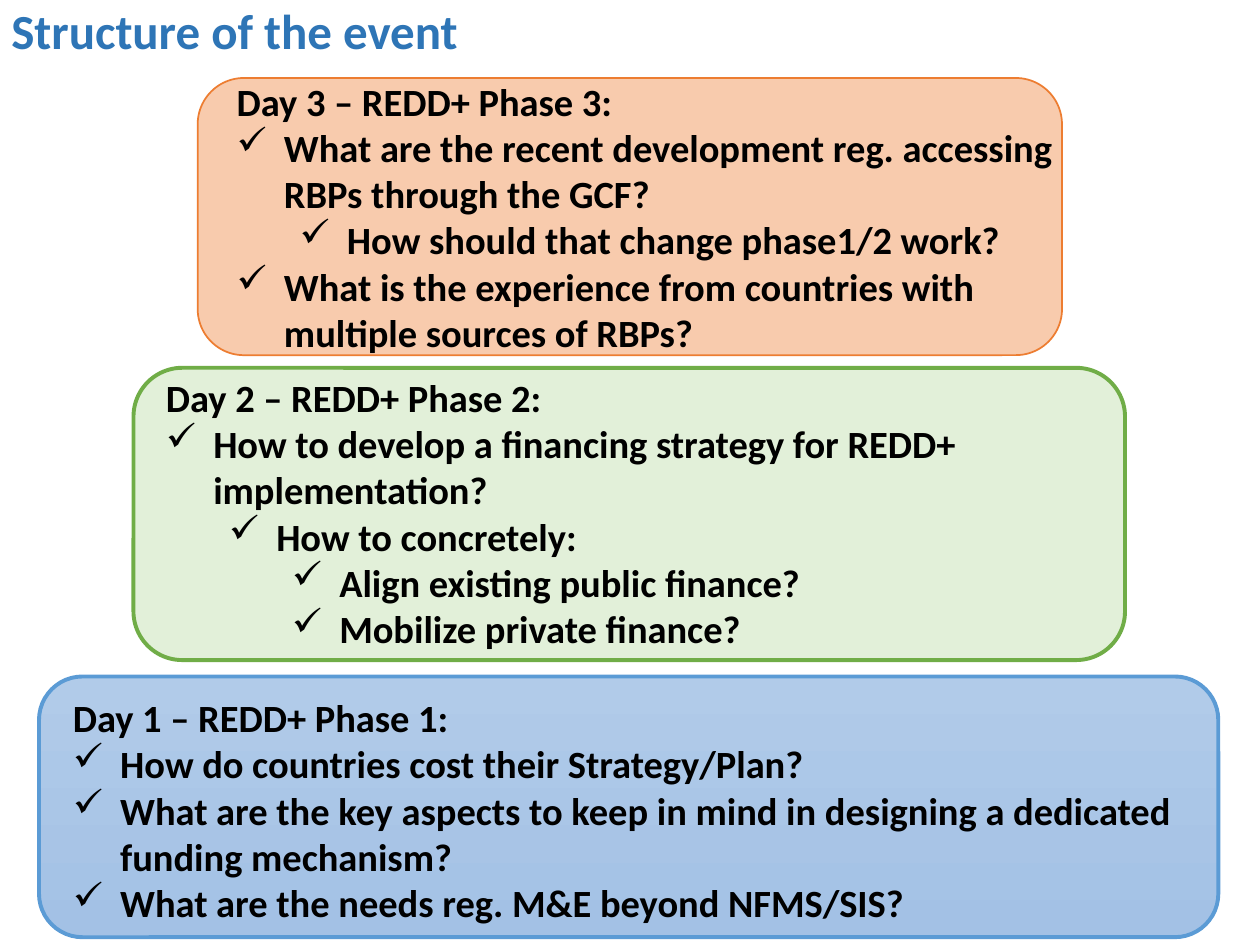
from lxml import etree
from pptx import Presentation
from pptx.dml.color import RGBColor
from pptx.enum.shapes import MSO_SHAPE
from pptx.enum.text import MSO_ANCHOR, MSO_AUTO_SIZE, PP_ALIGN
from pptx.oxml.ns import qn
from pptx.util import Pt

ROUNDED = MSO_SHAPE.ROUNDED_RECTANGLE
MIDDLE = MSO_ANCHOR.MIDDLE
LEFT = PP_ALIGN.LEFT
NO_FIT = MSO_AUTO_SIZE.NONE
GROW = MSO_AUTO_SIZE.SHAPE_TO_FIT_TEXT
TITLE_ONLY = 5


def rgb(color):
    return RGBColor.from_string(color)


class Deck:
    font = "Calibri"
    title_color = "2E75B6"
    text_color = "000000"
    hanging = 27
    level_step = 36

    def __init__(self, width, height):
        self.prs = Presentation()
        self.prs.slide_width, self.prs.slide_height = Pt(width), Pt(height)
        self.s = self.prs.slides.add_slide(self.prs.slide_layouts[TITLE_ONLY])

    def style(self, p, size, color):
        p.font.name = self.font
        p.font.size = Pt(size)
        p.font.bold = True
        p.font.color.rgb = rgb(color)
        p.alignment = LEFT

    def title(self, text, x, y, w, h):
        sp = self.s.shapes.title
        sp.left, sp.top, sp.width, sp.height = map(Pt, (x, y, w, h))
        tf = sp.text_frame
        tf.text = text
        tf.auto_size = NO_FIT
        tf.vertical_anchor = MIDDLE
        p = tf.paragraphs[0]
        self.style(p, 28, self.title_color)
        p.space_before = Pt(7)
        p.line_spacing = 0.9

    def panel(self, x, y, w, h, fills, line, line_width):
        """One fill colour is solid; two run from top to bottom."""
        sp = self.s.shapes.add_shape(ROUNDED, *map(Pt, (x, y, w, h)))
        sp.shadow.inherit = False
        if len(fills) == 1:
            sp.fill.solid()
            sp.fill.fore_color.rgb = rgb(fills[0])
        else:
            sp.fill.gradient()
            sp.fill.gradient_angle = 270
            for stop, color, position in zip(sp.fill.gradient_stops, fills, (0, 1)):
                stop.color.rgb = rgb(color)
                stop.position = position
        sp.line.color.rgb = rgb(line)
        sp.line.width = Pt(line_width)

    def checklist(self, x, y, w, h, heading, items):
        tf = self.s.shapes.add_textbox(*map(Pt, (x, y, w, h))).text_frame
        tf.word_wrap = True
        tf.auto_size = GROW
        p = tf.paragraphs[0]
        p.text = heading
        self.style(p, 22, self.text_color)
        for level, text in items:
            p = tf.add_paragraph()
            p.text = text
            p.level = level
            self.style(p, 22, self.text_color)
            self.check(p, level)

    def check(self, p, level):
        pPr = p._p.get_or_add_pPr()
        pPr.set("marL", str(Pt(self.hanging + level * self.level_step)))
        pPr.set("indent", str(-Pt(self.hanging)))
        bullet = etree.Element(qn("a:buChar"), char="✓")
        pPr.insert_element_before(bullet, "a:tabLst", "a:defRPr", "a:extLst")


# Panel box, fills, line, line width, text box, heading, (level, item) pairs
DAYS = [
    ((22.3, 386.6, 673.9, 149), ["B1CBE9", "A3C1E5"], "5B9BD5", 2.25,
     (34.6, 393.1, 650.9, 140.4), "Day 1 – REDD+ Phase 1:", [
         (0, "How do countries cost their Strategy/Plan?"),
         (0, "What are the key aspects to keep in mind in designing a "
             "dedicated funding mechanism?"),
         (0, "What are the needs reg. M&E beyond NFMS/SIS?")]),
    ((76.3, 210.2, 566.6, 167), ["E2F0D9"], "70AD47", 2.25,
     (87.8, 210.2, 544.3, 167), "Day 2 – REDD+ Phase 2:", [
         (0, "How to develop a financing strategy for REDD+ implementation?"),
         (1, "How to concretely:"),
         (2, "Align existing public finance?"),
         (2, "Mobilize private finance?")]),
    ((113, 44.6, 493.9, 158.4), ["F8CBAD"], "ED7D31", 1,
     (128.2, 41, 484.6, 167), "Day 3 – REDD+ Phase 3:", [
         (0, "What are the recent development reg. accessing RBPs "
             "through the GCF?"),
         (1, "How should that change phase1/2 work?"),
         (0, "What is the experience from countries with multiple "
             "sources of RBPs?")]),
]


def main():
    deck = Deck(720, 540)
    deck.title("Structure of the event", -0.7, -1.4, 720.7, 41)

    # Pyramid of days, from the base up
    for box, fills, line, line_width, text_box, heading, items in DAYS:
        deck.panel(*box, fills, line, line_width)
        deck.checklist(*text_box, heading, items)

    deck.prs.save("out.pptx")


if __name__ == "__main__":
    main()
